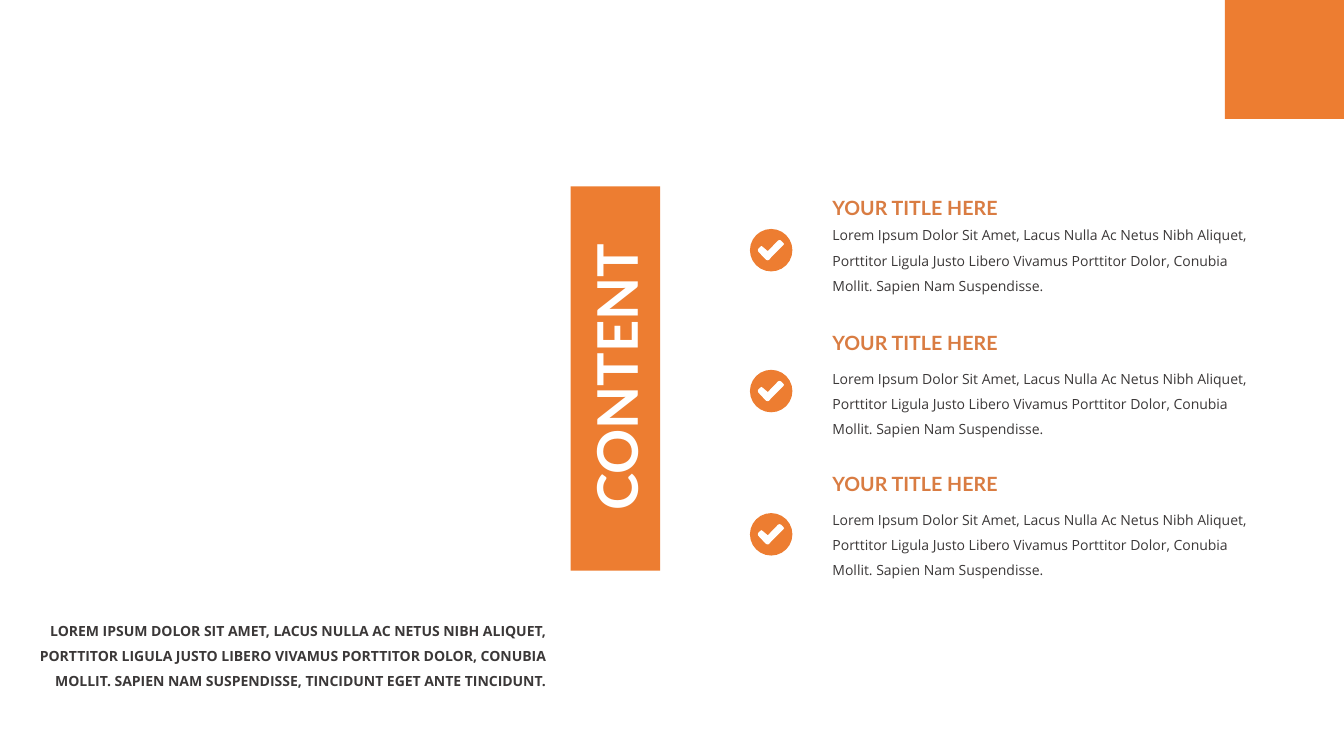
import pptx
import pptx.dml.color
import pptx.enum.shapes
import pptx.enum.text
import pptx.util

Cm = pptx.util.Cm
Pt = pptx.util.Pt
Align = pptx.enum.text.PP_ALIGN
Shape = pptx.enum.shapes.MSO_SHAPE

TITLE = "CONTENT"
LOREM = ("Lorem Ipsum Dolor Sit Amet, Lacus Nulla Ac Netus Nibh Aliquet, Porttitor Ligula Justo "
         "Libero Vivamus Porttitor Dolor, Conubia Mollit. Sapien Nam Suspendisse.")
# heading, body, then the tops of heading, body and badge in cm
ITEMS = [
    ("YOUR TITLE HERE", LOREM, 4.7, 5.38, 5.77),
    ("YOUR TITLE HERE", LOREM, 8.1, 8.99, 9.32),
    ("YOUR TITLE HERE", LOREM, 11.66, 12.55, 12.93),
]
SUMMARY = ("LOREM IPSUM DOLOR SIT AMET, LACUS NULLA AC NETUS NIBH ALIQUET, PORTTITOR LIGULA JUSTO "
           "LIBERO VIVAMUS PORTTITOR DOLOR, CONUBIA MOLLIT. SAPIEN NAM SUSPENDISSE, "
           "TINCIDUNT EGET ANTE TINCIDUNT.")

ORANGE, HEADING, DARK, WHITE = "ED7D31", "D97C42", "3B3838", "FFFFFF"
SLIDE_WIDTH, SLIDE_HEIGHT = 33.87, 19.05
CORNER = 3
TEXT_LEFT = 20.73
BADGE_LEFT, BADGE_SIZE = 18.9, 1.07
# outline of the check mark, in hundredths of a cm
TICK = [(64, 13), (33, 44), (28, 50), (25, 51), (21, 50), (15, 44), (1, 29), (0, 25), (1, 22),
        (6, 17), (9, 15), (12, 17), (25, 28), (51, 1), (55, 0), (58, 1), (64, 7), (66, 10)]


def rgb(value):
    return pptx.dml.color.RGBColor.from_string(value)


def paint(shape, color):
    """Fill a shape flat, without outline or shadow."""
    shape.shadow.inherit = False
    shape.fill.solid()
    shape.fill.fore_color.rgb = rgb(color)
    shape.line.fill.background()


def add_block(slide, kind, left, top, width, height):
    block = slide.shapes.add_shape(kind, Cm(left), Cm(top), Cm(width), Cm(height))
    paint(block, ORANGE)


def write(frame, text, size, font, color, bold=False, align=Align.LEFT, spacing=1.0):
    frame.word_wrap = True
    frame.auto_size = pptx.enum.text.MSO_AUTO_SIZE.SHAPE_TO_FIT_TEXT
    paragraph = frame.paragraphs[0]
    paragraph.alignment = align
    paragraph.line_spacing = spacing
    run = paragraph.add_run()
    run.text = text
    run.font.size = Pt(size)
    run.font.name = font
    run.font.bold = bold
    run.font.color.rgb = rgb(color)


def add_text(slide, left, top, width, height, *content, **style):
    box = slide.shapes.add_textbox(Cm(left), Cm(top), Cm(width), Cm(height))
    write(box.text_frame, *content, **style)


def add_badge(slide, top):
    """Draw a round badge with a check mark."""
    add_block(slide, Shape.OVAL, BADGE_LEFT, top, BADGE_SIZE, BADGE_SIZE)
    outline = slide.shapes.build_freeform(*TICK[0], scale=Cm(0.01))
    outline.add_line_segments(TICK[1:], close=True)
    paint(outline.convert_to_shape(Cm(BADGE_LEFT + 0.2), Cm(top + 0.28)), WHITE)


def main():
    deck = pptx.Presentation()
    deck.slide_width, deck.slide_height = Cm(SLIDE_WIDTH), Cm(SLIDE_HEIGHT)
    slide = deck.slides.add_slide(deck.slide_layouts[5])

    add_block(slide, Shape.RECTANGLE, 14.38, 4.7, 2.26, 9.68)
    title = slide.shapes.title
    title.left, title.top, title.width, title.height = Cm(11.66), Cm(8.53), Cm(7.7), Cm(1.96)
    title.rotation = 270
    write(title.text_frame, TITLE, 40, "Lato", WHITE, bold=True, align=Align.CENTER)
    # bring the title in front of its bar
    slide.shapes._spTree.append(title._element)

    for heading, body, heading_top, body_top, badge_top in ITEMS:
        add_text(slide, TEXT_LEFT, heading_top, 5.13, 0.89, heading, 14, "Lato", HEADING,
                 bold=True, spacing=1.2)
        add_text(slide, TEXT_LEFT, body_top, 11.38, 2.18, body, 10, "Open Sans", DARK,
                 spacing=1.5)
        add_badge(slide, badge_top)

    add_block(slide, Shape.RECTANGLE, SLIDE_WIDTH - CORNER, 0, CORNER, CORNER)
    add_text(slide, 0, 15.34, 14, 2.18, SUMMARY, 10, "Open Sans", DARK,
             bold=True, align=Align.RIGHT, spacing=1.5)
    deck.save("out.pptx")


if __name__ == "__main__":
    main()
